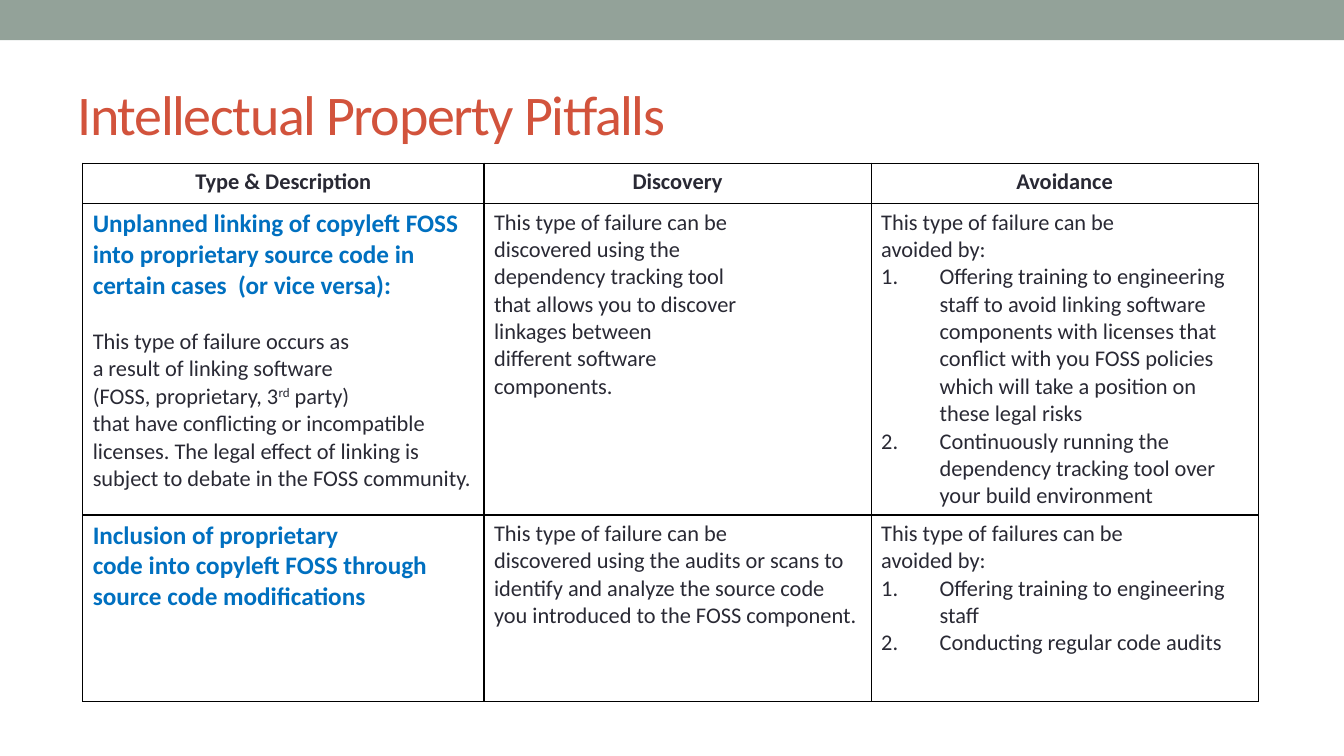
from lxml import etree
from pptx import Presentation
from pptx import util as u
from pptx.dml.color import RGBColor
from pptx.enum import shapes, text
from pptx.oxml.ns import qn

SAGE = RGBColor(0x93, 0xA2, 0x99)
RUST = RGBColor(0xD2, 0x53, 0x3C)
INK = RGBColor(0x29, 0x29, 0x34)
BLUE = RGBColor(0x00, 0x70, 0xC0)
BORDER = RGBColor(0x00, 0x00, 0x00)

HEADINGS = ["Type & Description", "Discovery", "Avoidance"]
PITFALLS = [
    {
        "headline": ["Unplanned linking of copyleft FOSS into proprietary source code in certain cases  (or vice versa):"],
        "description": [
            "This type of failure occurs as",
            "a result of linking software",
            "(FOSS, proprietary, 3^rd^ party)",
            "that have conflicting or incompatible licenses. The legal effect of linking is subject to debate in the FOSS community.",
        ],
        "discovery": [
            "This type of failure can be",
            "discovered using the",
            "dependency tracking tool",
            "that allows you to discover",
            "linkages between",
            "different software",
            "components.",
        ],
        "avoidance": ["This type of failure can be", "avoided by:"],
        "steps": [
            "Offering training to engineering staff to avoid linking software components with licenses that conflict with you FOSS policies which will take a position on these legal risks",
            "Continuously running the dependency tracking tool over your build environment",
        ],
    },
    {
        "headline": [
            "Inclusion of proprietary",
            "code into copyleft FOSS through",
            "source code modifications",
        ],
        "description": [],
        "discovery": [
            "This type of failure can be",
            "discovered using the audits or scans to identify and analyze the source code you introduced to the FOSS component.",
        ],
        "avoidance": ["This type of failures can be", "avoided by:"],
        "steps": [
            "Offering training to engineering staff",
            "Conducting regular code audits",
        ],
    },
]


class PitfallSlide:
    font = "Calibri"
    body_size = 16
    headline_size = 18
    step_indent = u.Inches(0.58)

    def __init__(self, deck):
        self.slide = deck.slides.add_slide(deck.slide_layouts[5])

    def style(self, paragraph, size, color, bold=False):
        paragraph.font.name = self.font
        paragraph.font.size = u.Pt(size)
        paragraph.font.bold = bold
        paragraph.font.color.rgb = color

    def band(self, width, height):
        band = self.slide.shapes.add_shape(
            shapes.MSO_SHAPE.RECTANGLE, 0, 0, u.Inches(width), u.Inches(height))
        band.shadow.inherit = False
        band.fill.solid()
        band.fill.fore_color.rgb = SAGE
        band.line.fill.background()

    def title(self, wording, left, top, width, height):
        title = self.slide.shapes.title
        title.left, title.top = u.Inches(left), u.Inches(top)
        title.width, title.height = u.Inches(width), u.Inches(height)
        frame = title.text_frame
        frame.text = wording
        frame.vertical_anchor = text.MSO_ANCHOR.MIDDLE
        heading = frame.paragraphs[0]
        heading.alignment = text.PP_ALIGN.LEFT
        self.style(heading, 40, RUST)
        heading.runs[0].font._element.set("spc", "-100")

    def table(self, left, top, columns, rows):
        frame = self.slide.shapes.add_table(
            len(rows), len(columns), u.Inches(left), u.Inches(top),
            u.Inches(sum(columns)), u.Inches(sum(rows)))
        grid = frame.table
        grid.first_row = grid.horz_banding = False
        for column, width in zip(grid.columns, columns):
            column.width = u.Inches(width)
        for row, height in zip(grid.rows, rows):
            row.height = u.Inches(height)
        for cell in grid.iter_cells():
            cell.fill.background()
            self.outline(cell)
        return grid

    def outline(self, cell):
        properties = cell._tc.get_or_add_tcPr()
        for place, side in enumerate(("lnL", "lnR", "lnT", "lnB")):
            line = etree.Element(qn(f"a:{side}"), w=str(u.Pt(1)))
            fill = etree.SubElement(line, qn("a:solidFill"))
            etree.SubElement(fill, qn("a:srgbClr"), val=str(BORDER))
            properties.insert(place, line)

    def add_lines(self, cell, lines, size=body_size, color=INK, bold=False, numbered=False):
        frame = cell.text_frame
        for line in lines:
            paragraph = frame.add_paragraph() if frame.text else frame.paragraphs[0]
            for place, part in enumerate(line.split("^")):
                run = paragraph.add_run()
                run.text = part
                if place % 2:
                    run.font._element.set("baseline", "30000")
            if numbered:
                properties = paragraph._p.get_or_add_pPr()
                properties.set("marL", str(self.step_indent))
                properties.set("indent", str(-self.step_indent))
                etree.SubElement(properties, qn("a:buAutoNum"), type="arabicPeriod")
            self.style(paragraph, size, color, bold)

    def headings(self, cells, labels):
        for cell, label in zip(cells, labels):
            self.add_lines(cell, [label], bold=True)
            cell.text_frame.paragraphs[0].alignment = text.PP_ALIGN.CENTER

    def pitfall(self, cells, content):
        kind, discovery, avoidance = cells
        self.add_lines(kind, content["headline"], self.headline_size, BLUE, bold=True)
        if content["description"]:
            kind.text_frame.paragraphs[-1].space_after = u.Pt(19.5)
            self.add_lines(kind, content["description"])
        self.add_lines(discovery, content["discovery"])
        self.add_lines(avoidance, content["avoidance"])
        self.add_lines(avoidance, content["steps"], numbered=True)


def main():
    deck = Presentation()
    deck.slide_width, deck.slide_height = u.Inches(13.33), u.Inches(7.5)
    page = PitfallSlide(deck)
    page.band(13.33, 0.4)
    page.title("Intellectual Property Pitfalls", 0.67, 0.58, 12, 1.08)
    grid = page.table(0.82, 1.62, [3.98, 3.84, 3.84], [0.4, 3.09, 1.85])
    heading_row, *pitfall_rows = grid.rows
    page.headings(heading_row.cells, HEADINGS)
    for row, content in zip(pitfall_rows, PITFALLS):
        page.pitfall(row.cells, content)
    deck.save("out.pptx")


if __name__ == "__main__":
    main()
